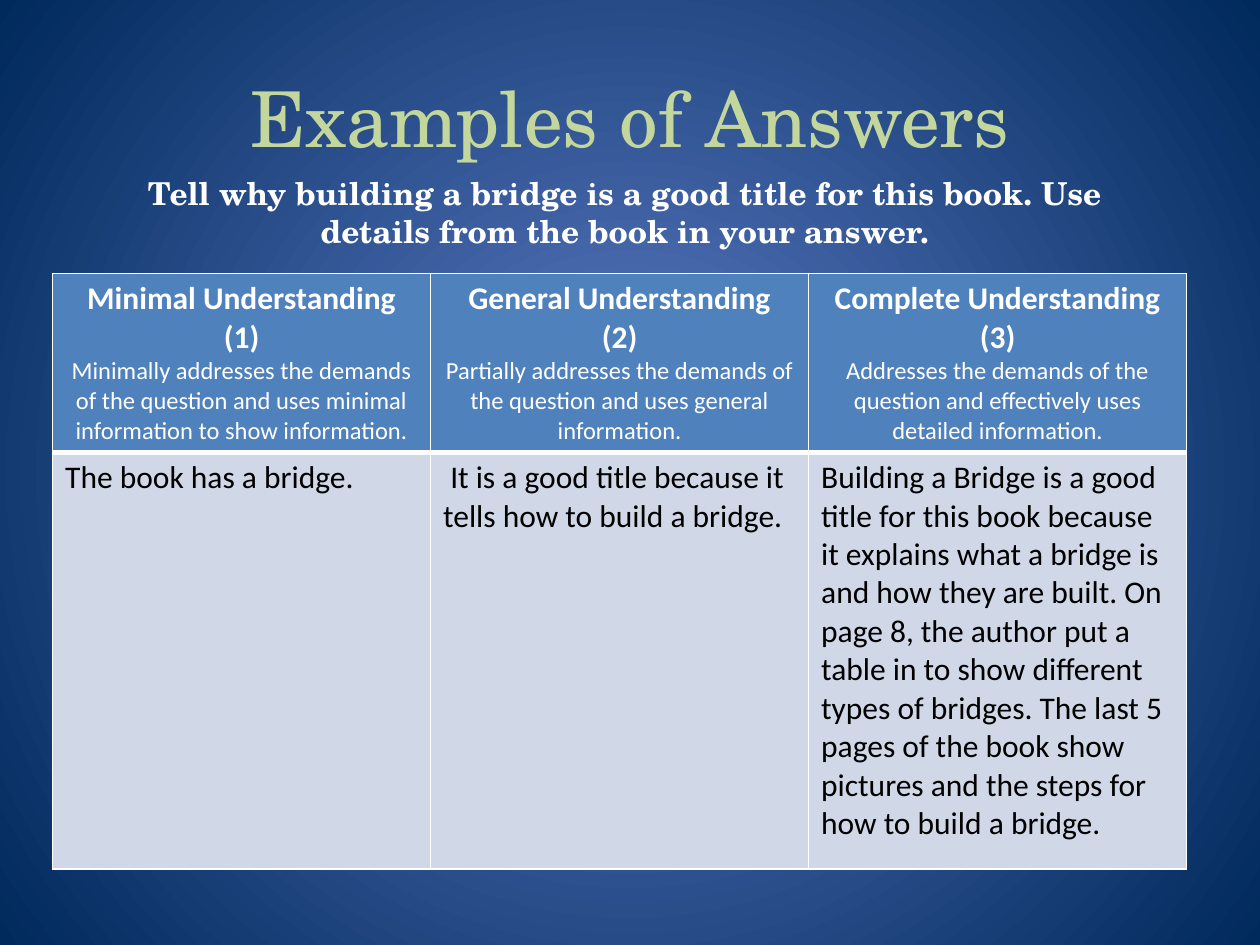
"""Build a slide that compares three levels of answers to a book question."""
from dataclasses import dataclass

from lxml.etree import SubElement
from pptx import Presentation
from pptx.dml.color import RGBColor as Color
from pptx.enum.text import MSO_ANCHOR as Anchor, MSO_AUTO_SIZE as AutoSize, PP_ALIGN as Align
from pptx.oxml.ns import qn
from pptx.util import Cm, Pt


@dataclass(frozen=True)
class Theme:
    glow: str = "5E7CC5"
    night: str = "00295C"
    heading: str = "C3D69B"
    white: str = "FFFFFF"
    black: str = "000000"
    header: str = "4F81BD"
    body: str = "D0D8E8"
    serif: str = "TeX Gyre Schola"
    sans: str = "Calibri"
    title_size: int = 44
    text_size: int = 18
    note_size: int = 14


theme = Theme()


def write(para, text, size=theme.text_size, font=theme.sans, color=theme.white,
          bold=False, align=Align.CENTER):
    para.alignment = align
    span = para.add_run()
    span.text = text
    span.font.size = Pt(size)
    span.font.name = font
    span.font.bold = bold
    span.font.color.rgb = Color.from_string(color)


def style_cell(cell, fill, **widths):
    properties = cell._tc.get_or_add_tcPr()
    for side in "LRTB":
        line = SubElement(properties, qn(f"a:ln{side}"), w=str(Pt(widths.get(side, 1))))
        solid = SubElement(line, qn("a:solidFill"))
        SubElement(solid, qn("a:srgbClr"), val=theme.white)
    cell.fill.solid()
    cell.fill.fore_color.rgb = Color.from_string(fill)


deck = Presentation()
deck.slide_width, deck.slide_height = Cm(25.4), Cm(19.05)
page = deck.slides.add_slide(deck.slide_layouts[5])

backdrop = page.background.fill
backdrop.gradient()
for stop, color in zip(backdrop.gradient_stops, (theme.glow, theme.night)):
    stop.color.rgb = Color.from_string(color)
gradient = page.element.find(f".//{qn('a:gradFill')}")
gradient.remove(gradient.find(qn("a:lin")))
circle = SubElement(gradient, qn("a:path"), path="circle")
SubElement(circle, qn("a:fillToRect"), l="50000", t="50000", r="50000", b="50000")

title = page.shapes.title
title.left, title.top, title.width, title.height = Cm(1.27), Cm(0.76), Cm(22.86), Cm(3.18)
title.text_frame.vertical_anchor = Anchor.MIDDLE
write(title.text_frame.paragraphs[0], "Examples of Answers",
      size=theme.title_size, font=theme.serif, color=theme.heading)

levels = [
    ("Minimal Understanding",
     "Minimally addresses the demands of the question and uses minimal information "
     "to show information.",
     "The book has a bridge."),
    ("General Understanding",
     "Partially addresses the demands of the question and uses general information.",
     " It is a good title because it tells how to build a bridge."),
    ("Complete Understanding",
     "Addresses the demands of the question and effectively uses detailed information.",
     "Building a Bridge is a good title for this book because it explains what a bridge is "
     "and how they are built. On page 8, the author put a table in to show different types "
     "of bridges. The last 5 pages of the book show pictures and the steps for how to build "
     "a bridge."),
]
table = page.shapes.add_table(2, len(levels), Cm(1.06), Cm(5.51), Cm(22.86), Cm(11.96)).table
table.horz_banding = False
for row, height in zip(table.rows, (3.56, 8.4)):
    row.height = Cm(height)

for column, (name, rule, answer) in enumerate(levels):
    table.columns[column].width = Cm(7.62)
    header, body = table.cell(0, column), table.cell(1, column)
    style_cell(header, theme.header, B=3)
    style_cell(body, theme.body, T=3)
    frame = header.text_frame
    write(frame.paragraphs[0], name, bold=True)
    write(frame.add_paragraph(), f"({column + 1})", bold=True)
    write(frame.add_paragraph(), rule, size=theme.note_size)
    write(body.text_frame.paragraphs[0], answer, color=theme.black, align=Align.LEFT)

box = page.shapes.add_textbox(Cm(1.9), Cm(3.38), Cm(21.39), Cm(1.8))
box.text_frame.word_wrap = True
box.text_frame.auto_size = AutoSize.SHAPE_TO_FIT_TEXT
write(box.text_frame.paragraphs[0],
      "Tell why building a bridge is a good title for this book. "
      "Use details from the book in your answer.",
      font=theme.serif, bold=True)

deck.save("out.pptx")
